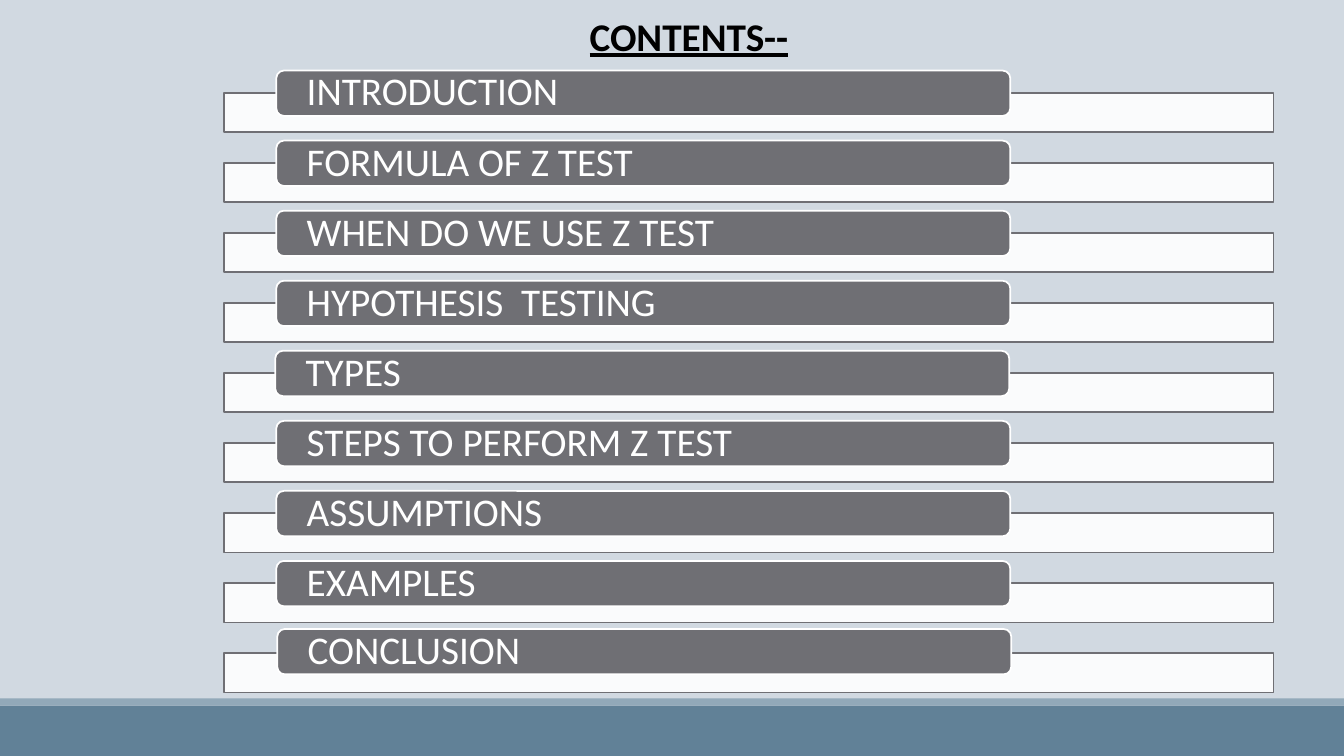
from dataclasses import dataclass

from lxml import etree
from pptx import Presentation
from pptx.dml.color import RGBColor
from pptx.enum.shapes import MSO_SHAPE
from pptx.enum.text import MSO_ANCHOR, MSO_AUTO_SIZE, PP_ALIGN
from pptx.oxml.ns import qn
from pptx.shapes.autoshape import Shape
from pptx.slide import Slide
from pptx.text.text import Font
from pptx.util import Inches, Pt

RECTANGLE = MSO_SHAPE.RECTANGLE
ROUNDED = MSO_SHAPE.ROUNDED_RECTANGLE
MIDDLE = MSO_ANCHOR.MIDDLE
LEFT = PP_ALIGN.LEFT
FIT_SHAPE = MSO_AUTO_SIZE.SHAPE_TO_FIT_TEXT

BACKGROUND = RGBColor(0xD1, 0xD9, 0xE1)
FOOTER_BLUE = RGBColor(0x61, 0x81, 0x97)
FOOTER_EDGE = RGBColor(0x92, 0xA9, 0xB9)
GREY = RGBColor(0x6F, 0x6F, 0x74)
WHITE = RGBColor(0xFF, 0xFF, 0xFF)
BLACK = RGBColor(0x00, 0x00, 0x00)

FIRST_BAR_TOP = 0.92
ROW_PITCH = 0.695
TAB_RISE = 0.22


@dataclass(frozen=True)
class Topic:
    label: str
    shift_x: float = 0
    shift_y: float = 0


TOPICS = [
    Topic("INTRODUCTION"),
    Topic("FORMULA OF Z TEST"),
    Topic("WHEN DO WE USE Z TEST"),
    Topic("HYPOTHESIS  TESTING"),
    Topic("TYPES", shift_x=-0.01),
    Topic("STEPS TO PERFORM Z TEST"),
    Topic("ASSUMPTIONS"),
    Topic("EXAMPLES"),
    Topic("CONCLUSION", shift_x=0.01, shift_y=-0.02),
]


def add_block(slide: Slide, kind: MSO_SHAPE, left: float, top: float, width: float,
              height: float, fill: RGBColor, outline: RGBColor | None = None) -> Shape:
    block = slide.shapes.add_shape(
        kind, Inches(left), Inches(top), Inches(width), Inches(height))
    block.shadow.inherit = False
    block.fill.solid()
    block.fill.fore_color.rgb = fill
    if outline is None:
        block.line.fill.background()
    else:
        block.line.color.rgb = outline
        block.line.width = Pt(1.25)
    return block


def set_opacity(block: Shape, percent: int) -> None:
    color = block.fill._xPr.find(qn("a:solidFill"))[0]
    etree.SubElement(color, qn("a:alpha"), val=str(percent * 1000))


def style_font(font: Font, color: RGBColor) -> None:
    font.name = "Calibri"
    font.size = Pt(28)
    font.color.rgb = color


def add_topic(slide: Slide, topic: Topic, bar_top: float) -> None:
    bar = add_block(slide, RECTANGLE, 2.22, bar_top, 10.41, 0.39, WHITE, GREY)
    set_opacity(bar, 90)
    tab = add_block(slide, ROUNDED, 2.74 + topic.shift_x,
                    bar_top - TAB_RISE + topic.shift_y, 7.28, 0.45, GREY, WHITE)
    frame = tab.text_frame
    frame.text = topic.label
    frame.word_wrap = True
    frame.vertical_anchor = MIDDLE
    frame.margin_left = frame.margin_right = Inches(0.28)
    frame.margin_top = frame.margin_bottom = 0
    paragraph = frame.paragraphs[0]
    paragraph.alignment = LEFT
    paragraph.line_spacing = 0.9
    style_font(paragraph.runs[0].font, WHITE)


def add_title(slide: Slide) -> None:
    title = slide.shapes.add_textbox(Inches(5.75), Inches(0.07), Inches(2.96), Inches(0.57))
    frame = title.text_frame
    frame.text = "CONTENTS--"
    frame.word_wrap = True
    frame.auto_size = FIT_SHAPE
    font = frame.paragraphs[0].runs[0].font
    style_font(font, BLACK)
    font.bold = True
    font.underline = True


def main() -> None:
    deck = Presentation()
    deck.slide_width = Inches(13.33)
    deck.slide_height = Inches(7.5)
    slide = deck.slides.add_slide(deck.slide_layouts[6])
    slide.background.fill.solid()
    slide.background.fill.fore_color.rgb = BACKGROUND

    add_block(slide, RECTANGLE, 0, 7, 13.33, 0.5, FOOTER_BLUE)
    add_block(slide, RECTANGLE, 0, 6.93, 13.33, 0.07, FOOTER_EDGE)
    for row, topic in enumerate(TOPICS):
        add_topic(slide, topic, FIRST_BAR_TOP + row * ROW_PITCH)
    add_title(slide)

    deck.save("out.pptx")


if __name__ == "__main__":
    main()
